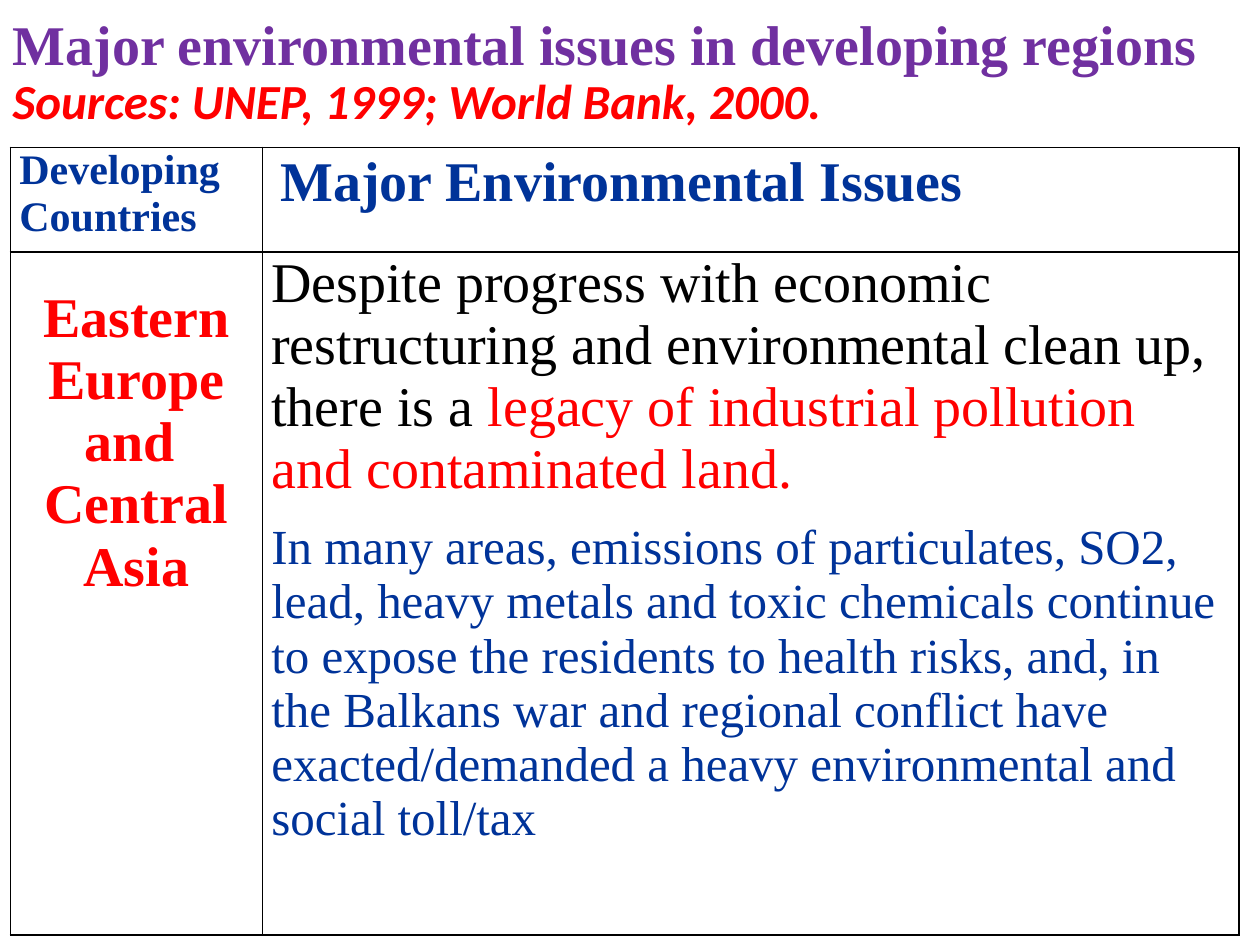
from lxml.etree import SubElement
from pptx import Presentation
from pptx.dml.color import RGBColor
from pptx.enum.text import MSO_ANCHOR, MSO_AUTO_SIZE, PP_ALIGN
from pptx.oxml.ns import qn
from pptx.util import Cm, Pt

COLORS = {"purple": "7030A0", "red": "FF0000", "blue": "003399", "black": "000000"}
SERIF = "Times New Roman"
COLUMN_WIDTHS = (5.08, 19.69)
ROW_HEIGHTS = (2.11, 13.77)


def add_run(paragraph, text, size, color, bold=False, italic=False, font=SERIF):
    """Append one formatted run to a paragraph."""
    run = paragraph.add_run()
    run.text = text
    run.font.name = font
    run.font.size = Pt(size)
    run.font.bold = bold
    run.font.italic = italic
    run.font.color.rgb = RGBColor.from_string(COLORS[color])


def add_title(slide):
    """Place the heading and its sources in the title placeholder."""
    title = slide.shapes.title
    title.left, title.top, title.width, title.height = Cm(0), Cm(0), Cm(24.77), Cm(2.97)
    frame = title.text_frame
    frame.auto_size = MSO_AUTO_SIZE.NONE
    frame.word_wrap = True
    frame.vertical_anchor = MSO_ANCHOR.MIDDLE
    heading = frame.paragraphs[0]
    heading.alignment = PP_ALIGN.LEFT
    heading.line_spacing = 0.9
    add_run(heading, "Major environmental issues in developing regions", 32, "purple", bold=True)
    heading.add_line_break()
    add_run(heading, "Sources: UNEP, 1999; World Bank, 2000.", 28, "red",
            bold=True, italic=True, font="Calibri")


def format_cell(cell):
    """Give a cell black borders, no fill and narrow margins."""
    properties = cell._tc.get_or_add_tcPr()
    for side in ("a:lnL", "a:lnR", "a:lnT", "a:lnB"):
        border = SubElement(properties, qn(side), w=str(Pt(1)))
        fill = SubElement(border, qn("a:solidFill"))
        SubElement(fill, qn("a:srgbClr"), val=COLORS["black"])
    cell.fill.background()
    cell.margin_left = cell.margin_right = Cm(0.18)
    cell.margin_top = cell.margin_bottom = Cm(0)


def add_issues_table(slide):
    """Add the bordered two-by-two table and return it."""
    table = slide.shapes.add_table(2, 2, Cm(0.21), Cm(2.97),
                                   Cm(sum(COLUMN_WIDTHS)), Cm(sum(ROW_HEIGHTS))).table
    table.first_row = table.horz_banding = False
    for column, width in zip(table.columns, COLUMN_WIDTHS):
        column.width = Cm(width)
    for row, height in zip(table.rows, ROW_HEIGHTS):
        row.height = Cm(height)
    for cell in table.iter_cells():
        format_cell(cell)
    return table


def fill_header(table):
    """Write the two column headings."""
    countries, issues = table.cell(0, 0), table.cell(0, 1)
    add_run(countries.text_frame.paragraphs[0], "Developing Countries", 24, "blue", bold=True)
    issues.margin_left = Cm(0.36)
    heading = issues.text_frame.paragraphs[0]
    heading.line_spacing = 1.07
    add_run(heading, "Major Environmental Issues", 32, "blue", bold=True)


def fill_region(cell):
    """Write the centred region name."""
    cell.margin_top = Cm(0.71)
    frame = cell.text_frame
    for index, line in enumerate(("Eastern Europe", "and ", "Central", "Asia")):
        paragraph = frame.add_paragraph() if index else frame.paragraphs[0]
        paragraph.alignment = PP_ALIGN.CENTER
        add_run(paragraph, line, 32, "red", bold=True)


def fill_issues(cell):
    """Write the environmental issues of the region."""
    legacy = cell.text_frame.paragraphs[0]
    add_run(legacy, "Despite progress with economic restructuring and environmental "
                    "clean up, there is a ", 32, "black")
    add_run(legacy, "legacy of industrial pollution and contaminated land.", 32, "red")
    emissions = cell.text_frame.add_paragraph()
    emissions.space_before = Pt(11.5)
    add_run(emissions, "In many areas, emissions of particulates, SO2, lead, heavy metals "
                       "and toxic chemicals continue to expose the residents to health "
                       "risks, and, in the Balkans war and regional conflict have "
                       "exacted/demanded a heavy environmental and social toll/tax", 28, "blue")


def main():
    """Build and save the slide."""
    presentation = Presentation()
    presentation.slide_width, presentation.slide_height = Cm(25.4), Cm(19.05)
    slide = presentation.slides.add_slide(presentation.slide_layouts.get_by_name("Title Only"))
    add_title(slide)
    table = add_issues_table(slide)
    fill_header(table)
    fill_region(table.cell(1, 0))
    fill_issues(table.cell(1, 1))
    presentation.save("out.pptx")


if __name__ == "__main__":
    main()
